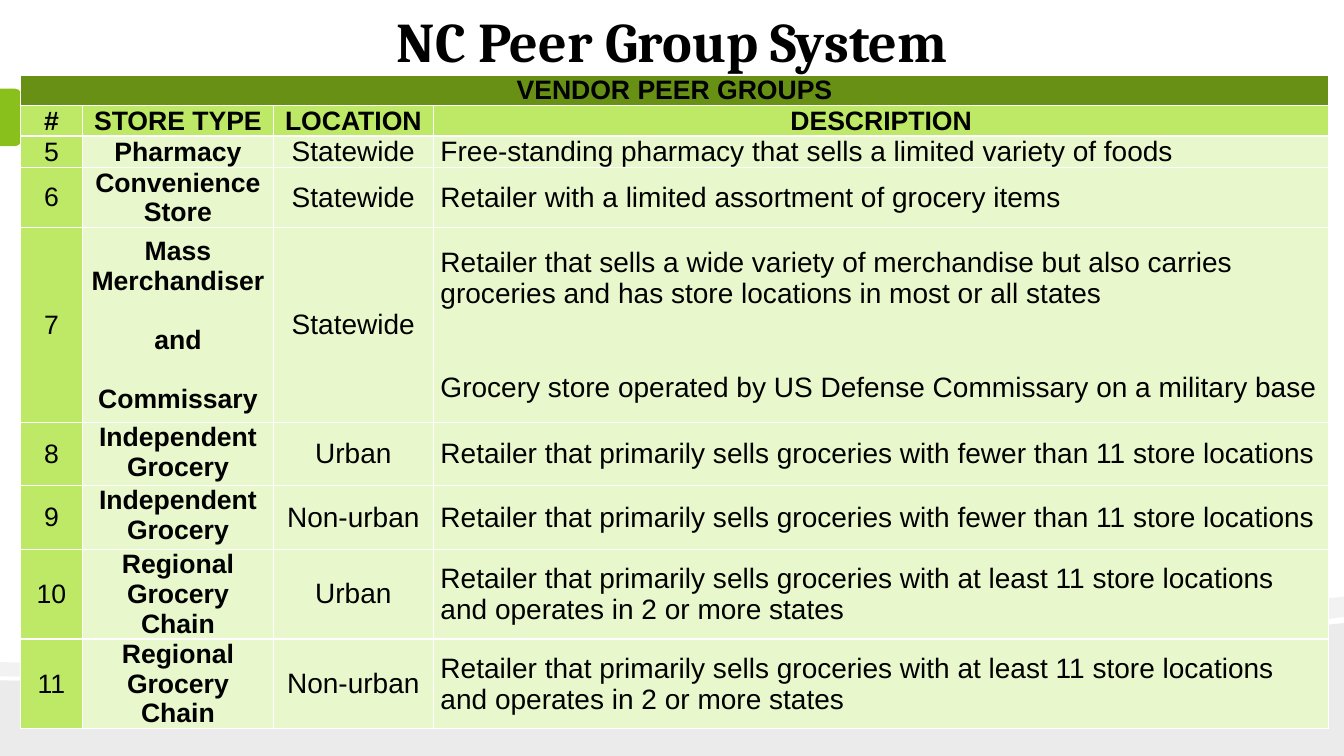
from pptx import Presentation
from pptx import util as u
from pptx.dml.color import RGBColor
from pptx.enum import shapes, text
from pptx.oxml import parse_xml
from pptx.oxml.ns import nsdecls
from lxml import etree

W, H = 13.33, 7.5
UNITS = 1000
BLACK = RGBColor(0x00, 0x00, 0x00)
TAB_GREEN = RGBColor(0x89, 0xC0, 0x1C)
DARK_GREEN = RGBColor(0x67, 0x90, 0x15)
MID_GREEN = RGBColor(0xBD, 0xE9, 0x67)
PALE_GREEN = RGBColor(0xE9, 0xF8, 0xCC)
A = "{http://schemas.openxmlformats.org/drawingml/2006/main}"


def curve(p0, p1, p2, p3, n=16):
    pts = []
    for i in range(n + 1):
        t = i / n
        k = ((1 - t) ** 3, 3 * t * (1 - t) ** 2, 3 * t * t * (1 - t), t ** 3)
        pts.append(tuple(sum(c * p[a] for c, p in zip(k, (p0, p1, p2, p3)))
                         for a in (0, 1)))
    return pts


def style(p, font, size, bold, align):
    p.alignment = align
    for r in p.runs:
        r.font.name = font
        r.font.size = u.Pt(size)
        r.font.bold = bold
        r.font.color.rgb = BLACK


prs = Presentation()
prs.slide_width, prs.slide_height = u.Inches(W), u.Inches(H)
s = prs.slides.add_slide(prs.slide_layouts[6])

ground = [(W, H), (0, H)] + curve((0, 6.75), (3.52, 6.83), (10.42, 6.55), (W, 6.18))
ribbon = (curve((W, 6.12), (12.55, 6.23), (11.49, 6.33), (10.29, 6.41))
          + curve((10.29, 6.41), (6.98, 6.63), (2.58, 6.77), (0, 6.71))[1:]
          + curve((0, 6.57), (6.52, 6.62), (9.71, 6.27), (W, 5.92)))
for pts, alpha in ((ground, 8), (ribbon, 5)):
    pts = [(round(x * UNITS), round(y * UNITS)) for x, y in pts]
    fb = s.shapes.build_freeform(*pts[0], scale=u.Inches(1) / UNITS)
    fb.add_line_segments(pts[1:], close=True)
    sp = fb.convert_to_shape()
    sp.shadow.inherit = False
    sp.line.fill.background()
    sp.fill.solid()
    sp.fill.fore_color.rgb = BLACK
    clr = sp.fill._xPr.find(f"{A}solidFill/{A}srgbClr")
    etree.SubElement(clr, f"{A}alpha", val=str(alpha * 1000))

sp = s.shapes.add_shape(shapes.MSO_SHAPE.ROUND_2_SAME_RECTANGLE,
                        u.Inches(-0.18), u.Inches(1.06), u.Inches(0.57), u.Inches(0.21))
sp.rotation = 90
sp.adjustments[0] = 0.29
sp.shadow.inherit = False
sp.line.fill.background()
sp.fill.solid()
sp.fill.fore_color.rgb = TAB_GREEN

title = s.shapes.add_textbox(u.Inches((W - 11) / 2), u.Inches(-0.7), u.Inches(11), u.Inches(1.5))
tf = title.text_frame
tf.word_wrap = True
tf.vertical_anchor = text.MSO_ANCHOR.BOTTOM
tf.margin_left = tf.margin_right = u.Inches(0.13)
tf.margin_top = tf.margin_bottom = u.Inches(0.07)
tf.text = "NC Peer Group System"
style(tf.paragraphs[0], "Cambria", 40, True, text.PP_ALIGN.CENTER)

small = "Retailer that primarily sells groceries with fewer than 11 store locations"
chain = ("Retailer that primarily sells groceries with at least 11 store locations "
         "and operates in 2 or more states")
rows = [
    ("VENDOR PEER GROUPS", "", "", ""),
    ("#", "STORE TYPE", "LOCATION", "DESCRIPTION"),
    ("5", "Pharmacy", "Statewide",
     "Free-standing pharmacy that sells a limited variety of foods"),
    ("6", "Convenience Store", "Statewide",
     "Retailer with a limited assortment of grocery items"),
    ("7", "Mass Merchandiser\nand\nCommissary", "Statewide",
     "Retailer that sells a wide variety of merchandise but also carries groceries "
     "and has store locations in most or all states\n"
     "Grocery store operated by US Defense Commissary on a military base"),
    ("8", "Independent Grocery", "Urban", small),
    ("9", "Independent Grocery", "Non-urban", small),
    ("10", "Regional Grocery Chain", "Urban", chain),
    ("11", "Regional Grocery Chain", "Non-urban", chain),
]
widths = [0.62, 1.89, 1.59, 8.88]
heights = [0.3, 0.3, 0.31, 0.6, 1.93, 0.63, 0.63, 0.89, 0.89]
line_heights = {19: 21.2, 20: 22.3}

tbl = s.shapes.add_table(len(rows), len(widths), u.Inches(0.2), u.Inches(0.75),
                         u.Inches(sum(widths)), u.Inches(sum(heights))).table
tbl.horz_banding = False
for col, w in zip(tbl.columns, widths):
    col.width = u.Inches(w)
for row, h in zip(tbl.rows, heights):
    row.height = u.Inches(h)
tbl.cell(0, 0).merge(tbl.cell(0, 3))

for i, row in enumerate(rows):
    for j, words in enumerate(row):
        cell = tbl.cell(i, j)
        head = i < 2
        top = i == 0 or (j == 1 and row[1].startswith("Independent"))
        cell.vertical_anchor = text.MSO_ANCHOR.TOP if top else text.MSO_ANCHOR.MIDDLE
        cell.margin_left = cell.margin_right = u.Inches(0.07)
        cell.margin_top = cell.margin_bottom = 0
        tcPr = cell._tc.get_or_add_tcPr()
        for side in ("lnL", "lnR", "lnT", "lnB"):
            tcPr.append(parse_xml(
                f'<a:{side} {nsdecls("a")} w="12700"><a:solidFill>'
                f'<a:srgbClr val="FFFFFF"/></a:solidFill></a:{side}>'))
        cell.fill.solid()
        cell.fill.fore_color.rgb = (DARK_GREEN if i == 0 else
                                    MID_GREEN if i == 1 or j == 0 else PALE_GREEN)
        cell.text_frame.text = words
        align = text.PP_ALIGN.LEFT if j == 3 and not head else text.PP_ALIGN.CENTER
        size = 19 if head or j < 2 else 20
        for n, p in enumerate(cell.text_frame.paragraphs):
            style(p, "Arial", size, head or j == 1, align)
            p.line_spacing = u.Pt(line_heights[size])
            if n:
                p.space_before = u.Pt(45 if j == 3 else 21)

prs.save("out.pptx")
